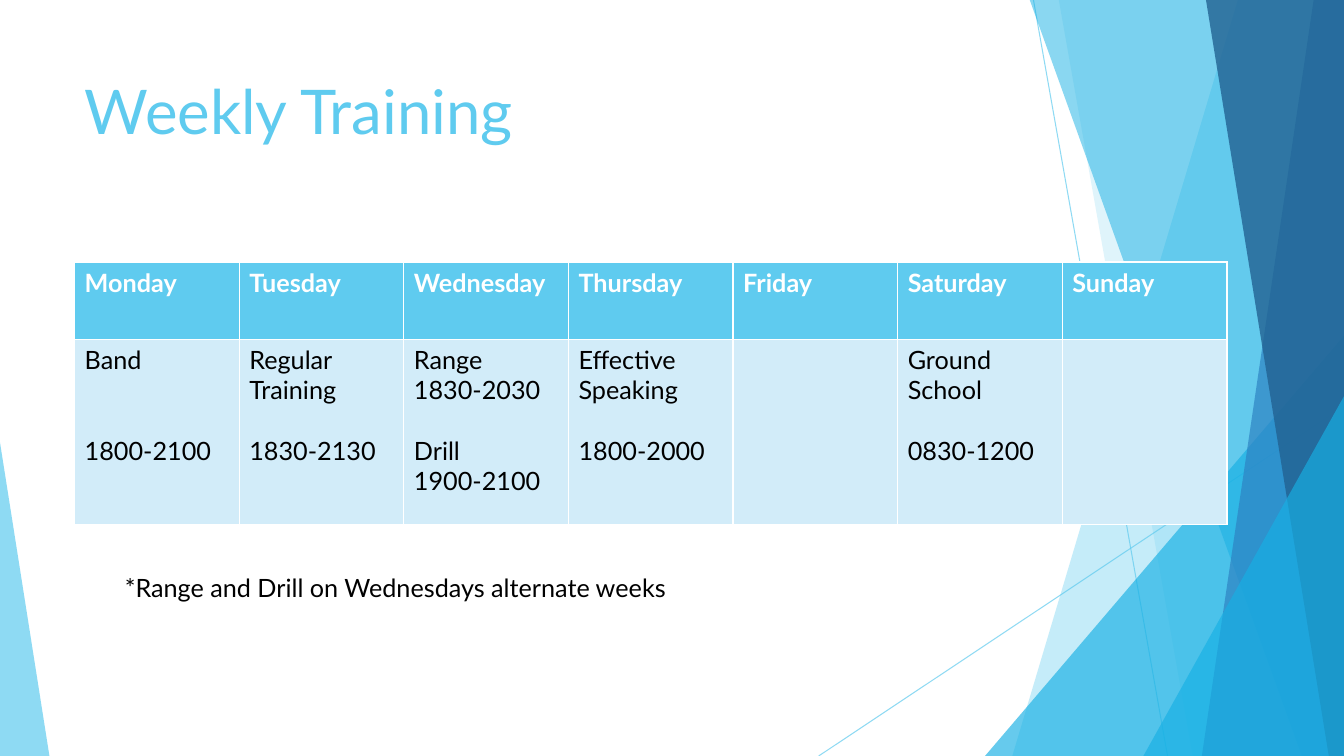
"""Build the weekly training timetable slide."""
from lxml.etree import SubElement
from pptx import Presentation
from pptx.dml.color import RGBColor
from pptx.enum.shapes import MSO_CONNECTOR, MSO_SHAPE
from pptx.enum.text import MSO_ANCHOR, MSO_AUTO_SIZE, PP_ALIGN
from pptx.oxml.ns import qn
from pptx.util import Inches, Pt

SKY = RGBColor(0x5F, 0xCB, 0xEF)
CYAN = RGBColor(0x17, 0xB0, 0xE4)
BLUE = RGBColor(0x2E, 0x83, 0xC3)
NAVY = RGBColor(0x22, 0x62, 0x92)
PALE = RGBColor(0xD2, 0xEC, 0xF9)
WHITE = RGBColor(0xFF, 0xFF, 0xFF)
BLACK = RGBColor(0, 0, 0)
FONT = "Lato"
RIGHT, TOP, BOTTOM = 13.33, -0.01, 7.5
LINE_GAP = 21.6


def set_alpha(element, percent):
    """Make the colour inside an element partly transparent."""
    colour = next(element.iter(qn("a:srgbClr")))
    SubElement(colour, qn("a:alpha"), val=str(percent * 1000))


def add_span(para, text, size, colour, bold=False):
    """Add one formatted run to a paragraph."""
    span = para.add_run()
    span.text = text
    span.font.name = FONT
    span.font.size = Pt(size)
    span.font.bold = bold
    span.font.color.rgb = colour


deck = Presentation()
deck.slide_width, deck.slide_height = Inches(RIGHT), Inches(BOTTOM)
page = deck.slides.add_slide(deck.slide_layouts[5])

for x1, y1, x2, y2 in [(10.25, 0, 11.58, BOTTOM), (RIGHT, 4.03, 8.12, BOTTOM)]:
    ray = page.shapes.add_connector(
        MSO_CONNECTOR.STRAIGHT, Inches(x1), Inches(y1), Inches(x2), Inches(y2))
    ray.line.color.rgb = SKY
    ray.line.width = Pt(0.75)
    properties = ray.element.spPr
    set_alpha(properties, 70)
    SubElement(properties, qn("a:effectLst"))

# Bands give top and bottom x; triangles give left, top, width and apex.
facets = [
    ((12.28, 10.04), SKY, 36),
    ((10.5, 11.83), SKY, 20),
    ((9.77, 3.33, 3.56, 1), CYAN, 66),
    ((10.21, 12.91), CYAN, 50),
    ((13.03, 11.92), BLUE, 70),
    ((11.96, 13.18), NAVY, 80),
    ((11.34, 3.93, 1.99, 1), CYAN, 66),
    ((0, 4.39, 0.49, 0), SKY, 70),
]
for outline, colour, percent in facets:
    if len(outline) == 2:
        top_x, bottom_x = outline
        builder = page.shapes.build_freeform(Inches(top_x), Inches(TOP))
        corners = [(RIGHT, TOP), (RIGHT, BOTTOM), (bottom_x, BOTTOM)]
        builder.add_line_segments([(Inches(x), Inches(y)) for x, y in corners])
        facet = builder.convert_to_shape()
    else:
        left, top, width, apex = outline
        facet = page.shapes.add_shape(
            MSO_SHAPE.ISOSCELES_TRIANGLE, Inches(left), Inches(top),
            Inches(width), Inches(BOTTOM - top))
        facet.adjustments[0] = apex
    facet.shadow.inherit = False
    facet.fill.solid()
    facet.fill.fore_color.rgb = colour
    set_alpha(facet.element.spPr, percent)
    facet.line.fill.background()

title = page.shapes.title
title.element.getparent().append(title.element)
title.left, title.top = Inches(0.74), Inches(0.67)
title.width, title.height = Inches(9.4), Inches(1.44)
title.text_frame.vertical_anchor = MSO_ANCHOR.TOP
title.text_frame.auto_size = MSO_AUTO_SIZE.NONE
para = title.text_frame.paragraphs[0]
para.alignment = PP_ALIGN.LEFT
add_span(para, "Weekly Training", 44, SKY)

# Each entry is a line of text and the number of empty lines above it.
timetable = {
    "Monday": [("Band", 0), ("1800-2100", 2)],
    "Tuesday": [("Regular Training", 0), ("1830-2130", 1)],
    "Wednesday": [("Range", 0), ("1830-2030", 0), ("Drill", 1), ("1900-2100", 0)],
    "Thursday": [("Effective Speaking", 0), ("1800-2000", 1)],
    "Friday": [],
    "Saturday": [("Ground School", 0), ("0830-1200", 1)],
    "Sunday": [],
}
table = page.shapes.add_table(
    2, len(timetable), Inches(0.74), Inches(2.6), Inches(11.43), Inches(2.6)).table
table.rows[0].height, table.rows[1].height = Inches(0.77), Inches(1.83)
for column, (day, entries) in enumerate(timetable.items()):
    header, body = table.cell(0, column), table.cell(1, column)
    for cell, colour in [(header, SKY), (body, PALE)]:
        cell.fill.solid()
        cell.fill.fore_color.rgb = colour
    add_span(header.text_frame.paragraphs[0], day, 18, WHITE, bold=True)
    for index, (text, gaps) in enumerate(entries):
        frame = body.text_frame
        para = frame.add_paragraph() if index else frame.paragraphs[0]
        if gaps:
            para.space_before = Pt(gaps * LINE_GAP)
        add_span(para, text, 18, BLACK)

note = page.shapes.add_textbox(Inches(1.14), Inches(5.63), Inches(8.73), Inches(0.4))
note.text_frame.word_wrap = True
note.text_frame.auto_size = MSO_AUTO_SIZE.SHAPE_TO_FIT_TEXT
add_span(note.text_frame.paragraphs[0],
         "*Range and Drill on Wednesdays alternate weeks", 18, BLACK)

deck.save("out.pptx")
